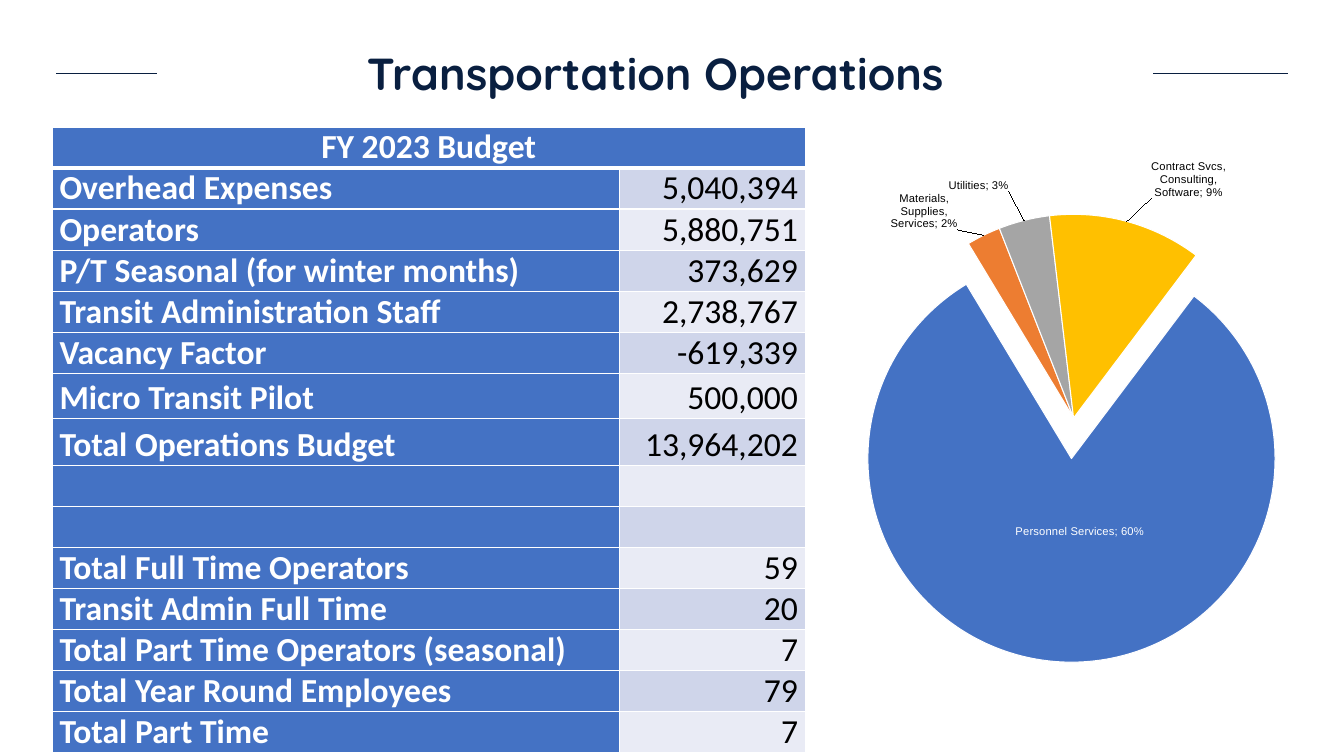
from dataclasses import dataclass

import pptx
import pptx.chart.data
import pptx.dml.color
import pptx.enum.chart
import pptx.enum.shapes
import pptx.enum.text
import pptx.oxml
import pptx.oxml.ns
import pptx.util
from pptx.util import Cm


@dataclass(frozen=True)
class Theme:
    navy: str = "091F40"
    blue: str = "4472C4"
    white: str = "FFFFFF"
    black: str = "000000"
    bands: tuple = ("CFD5EA", "E9EBF5")
    slices: tuple = ("4472C4", "ED7D31", "A5A5A5", "FFC000", "5B9BD5")
    title_font: str = "Quicksand"
    table_font: str = "Calibri"
    label_font: str = "Arial"
    title_size: int = 32
    table_size: int = 24
    chart_size: int = 10
    label_size: int = 8


THEME = Theme()

BUDGET = [
    ("Overhead Expenses", "5,040,394"),
    ("Operators", "5,880,751"),
    ("P/T Seasonal (for winter months)", "373,629"),
    ("Transit Administration Staff", "2,738,767"),
    ("Vacancy Factor", "-619,339"),
    ("Micro Transit Pilot", "500,000"),
    ("Total Operations Budget", "13,964,202"),
    ("", ""),
    ("", ""),
    ("Total Full Time Operators", "59"),
    ("Transit Admin Full Time", "20"),
    ("Total Part Time Operators (seasonal)", "7"),
    ("Total Year Round Employees", "79"),
    ("Total Part Time", "7"),
]
ROW_HEIGHT = 0.97
TALL_ROWS = {2: 1.04, 6: 1.14, 7: 1.19}

# Category, share, label shift (x, y) and label size (w, h) as chart fractions
SPENDING = [
    ("Personnel Services", 0.6, (0.03, -0.05), (0.19, 0.05)),
    ("Materials, Supplies, Services", 0.02, (-0.05, 0), (0.17, 0.07)),
    ("Utilities", 0.03, (-0.03, -0.04), (0.17, 0.03)),
    ("Contract Svcs, Consulting, Software", 0.09, (0.05, -0.03), (0.19, 0.07)),
    ("Parts, Maintenance Supplies", 0, (0.08, 0.03), (0.17, 0.07)),
]


def rgb(value):
    return pptx.dml.color.RGBColor.from_string(value)


def xml(tag, body="", attributes=""):
    """Element in the chart or drawing namespace, with the given content."""
    spaces = pptx.oxml.ns.nsdecls("c", "a")
    return pptx.oxml.parse_xml(f"<{tag} {spaces} {attributes}>{body}</{tag}>")


def add_run(paragraph, text, font, size, color, bold=False):
    run = paragraph.add_run()
    run.text = text
    run.font.name = font
    run.font.size = pptx.util.Pt(size)
    run.font.bold = bold
    run.font.color.rgb = rgb(color)


def add_title(slide, text):
    box = slide.shapes.add_textbox(Cm(3.96), Cm(1.04), Cm(25.12), Cm(1.63))
    frame = box.text_frame
    frame.word_wrap = True
    frame.auto_size = pptx.enum.text.MSO_AUTO_SIZE.SHAPE_TO_FIT_TEXT
    heading = frame.paragraphs[0]
    heading.alignment = pptx.enum.text.PP_ALIGN.CENTER
    add_run(heading, text, THEME.title_font, THEME.title_size, THEME.navy, True)


def add_rule(slide, left, right):
    height = Cm(1.85)
    rule = slide.shapes.add_connector(
        pptx.enum.shapes.MSO_CONNECTOR.STRAIGHT, Cm(left), height, Cm(right), height)
    rule.line.color.rgb = rgb(THEME.navy)
    rule.line.width = pptx.util.Pt(1)
    rule._element.spPr.append(xml("a:effectLst"))


def style_cell(cell, text, fill, color, align, bold, bottom=1):
    cell.fill.solid()
    cell.fill.fore_color.rgb = rgb(fill)
    if text:
        cell.margin_left = cell.margin_right = Cm(0.18)
        cell.margin_top = cell.margin_bottom = 0
        cell.vertical_anchor = pptx.enum.text.MSO_ANCHOR.BOTTOM
        entry = cell.text_frame.paragraphs[0]
        entry.alignment = align
        add_run(entry, text, THEME.table_font, THEME.table_size, color, bold)
    # Borders come before the fill in the cell properties
    properties = cell._tc.get_or_add_tcPr()
    for place, side in enumerate("LRTB"):
        points = bottom if side == "B" else 1
        properties.insert(place, xml(
            f"a:ln{side}",
            f'<a:solidFill><a:srgbClr val="{THEME.white}"/></a:solidFill>',
            f'w="{pptx.util.Pt(points)}"'))


def add_budget_table(slide):
    align = pptx.enum.text.PP_ALIGN
    budget = slide.shapes.add_table(
        len(BUDGET) + 1, 2, Cm(1.32), Cm(3.2), Cm(18.97), Cm(15.57)).table
    budget.first_row = budget.horz_banding = False
    for column, width in zip(budget.columns, (14.3, 4.67)):
        column.width = Cm(width)
    for index, row in enumerate(budget.rows):
        row.height = Cm(TALL_ROWS.get(index, ROW_HEIGHT))

    # Heading across both columns
    budget.cell(0, 0).merge(budget.cell(0, 1))
    for column, text in enumerate(("FY 2023 Budget", "")):
        style_cell(budget.cell(0, column), text, THEME.blue, THEME.white,
                   align.CENTER, True, bottom=3)

    # Items and amounts
    for index, (item, amount) in enumerate(BUDGET):
        style_cell(budget.cell(index + 1, 0), item, THEME.blue, THEME.white,
                   align.LEFT, True)
        style_cell(budget.cell(index + 1, 1), amount, THEME.bands[index % 2],
                   THEME.black, align.RIGHT, False)


def label_format(color, position):
    return (
        '<c:numFmt formatCode="0%" sourceLinked="0"/><c:spPr><a:noFill/></c:spPr>'
        f'<c:txPr><a:bodyPr wrap="square"/><a:p><a:pPr><a:defRPr sz="{THEME.label_size}00" b="0">'
        f'<a:solidFill><a:srgbClr val="{color}"/></a:solidFill>'
        f'<a:latin typeface="{THEME.label_font}"/></a:defRPr></a:pPr>'
        '<a:endParaRPr lang="en-US"/></a:p></c:txPr>'
        f'<c:dLblPos val="{position}"/><c:showLegendKey val="0"/><c:showVal val="1"/>'
        '<c:showCatName val="1"/><c:showSerName val="0"/><c:showPercent val="0"/>'
        '<c:showBubbleSize val="0"/><c:separator>; </c:separator>')


def slice_label(index, shift, size):
    look = label_format(THEME.black, "outEnd") if index else label_format(THEME.white, "ctr")
    return (
        f'<c:dLbl><c:idx val="{index}"/><c:layout><c:manualLayout>'
        f'<c:x val="{shift[0]}"/><c:y val="{shift[1]}"/></c:manualLayout></c:layout>{look}'
        '<c:extLst><c:ext uri="{CE6537A1-D6FC-4f65-9D91-7224C49458BB}" '
        'xmlns:c15="http://schemas.microsoft.com/office/drawing/2012/chart">'
        f'<c15:layout><c:manualLayout><c:w val="{size[0]}"/><c:h val="{size[1]}"/>'
        '</c:manualLayout></c15:layout></c:ext></c:extLst></c:dLbl>')


def add_spending_pie(slide):
    data = pptx.chart.data.CategoryChartData(number_format="0%")
    data.categories = [entry[0] for entry in SPENDING]
    data.add_series("Series 1", [entry[1] for entry in SPENDING])
    pie = slide.shapes.add_chart(
        pptx.enum.chart.XL_CHART_TYPE.PIE,
        Cm(21.44), Cm(3.35), Cm(11.58), Cm(14.66), data).chart
    pie.has_title = pie.has_legend = False
    pie.font.name = THEME.table_font
    pie.font.size = pptx.util.Pt(THEME.chart_size)
    pie.font.color.rgb = rgb(THEME.black)
    plot = pie.plots[0]
    plot.vary_by_categories = True
    spending = plot.series[0]

    # Slice colours
    for index, color in enumerate(THEME.slices):
        look = spending.points[index].format
        look.fill.solid()
        look.fill.fore_color.rgb = rgb(color)
        look.line.color.rgb = rgb(THEME.white)
        look.line.width = pptx.util.Pt(0.75)

    # Personnel slice pulled out, labels, start angle
    series = spending._element
    series.xpath("c:dPt[1]/c:spPr")[0].addprevious(xml("c:explosion", "", 'val="20"'))
    labels = "".join(slice_label(index, shift, size)
                     for index, (_, _, shift, size) in enumerate(SPENDING))
    series.xpath("c:cat")[0].addprevious(xml(
        "c:dLbls",
        labels + label_format(THEME.black, "outEnd") + '<c:showLeaderLines val="1"/>'))
    series.getparent().append(xml("c:firstSliceAng", "", 'val="37"'))

    # Place of the pie inside the chart
    area = series.getparent().getparent()
    for layout in area.xpath("c:layout"):
        area.remove(layout)
    frame = "".join(f'<c:{key} val="{value}"/>' for key, value in (
        ("layoutTarget", "inner"), ("xMode", "edge"), ("yMode", "edge"),
        ("x", 0.04), ("y", 0.14), ("w", 0.89), ("h", 0.7)))
    area.insert(0, xml("c:layout", f"<c:manualLayout>{frame}</c:manualLayout>"))


def main():
    deck = pptx.Presentation()
    deck.slide_width, deck.slide_height = Cm(33.87), Cm(19.05)
    slide = deck.slides.add_slide(deck.slide_layouts[6])
    add_budget_table(slide)
    add_spending_pie(slide)
    for left, right in ((1.42, 3.96), (29.06, 32.46)):
        add_rule(slide, left, right)
    add_title(slide, "Transportation Operations")
    deck.save("out.pptx")


if __name__ == "__main__":
    main()
